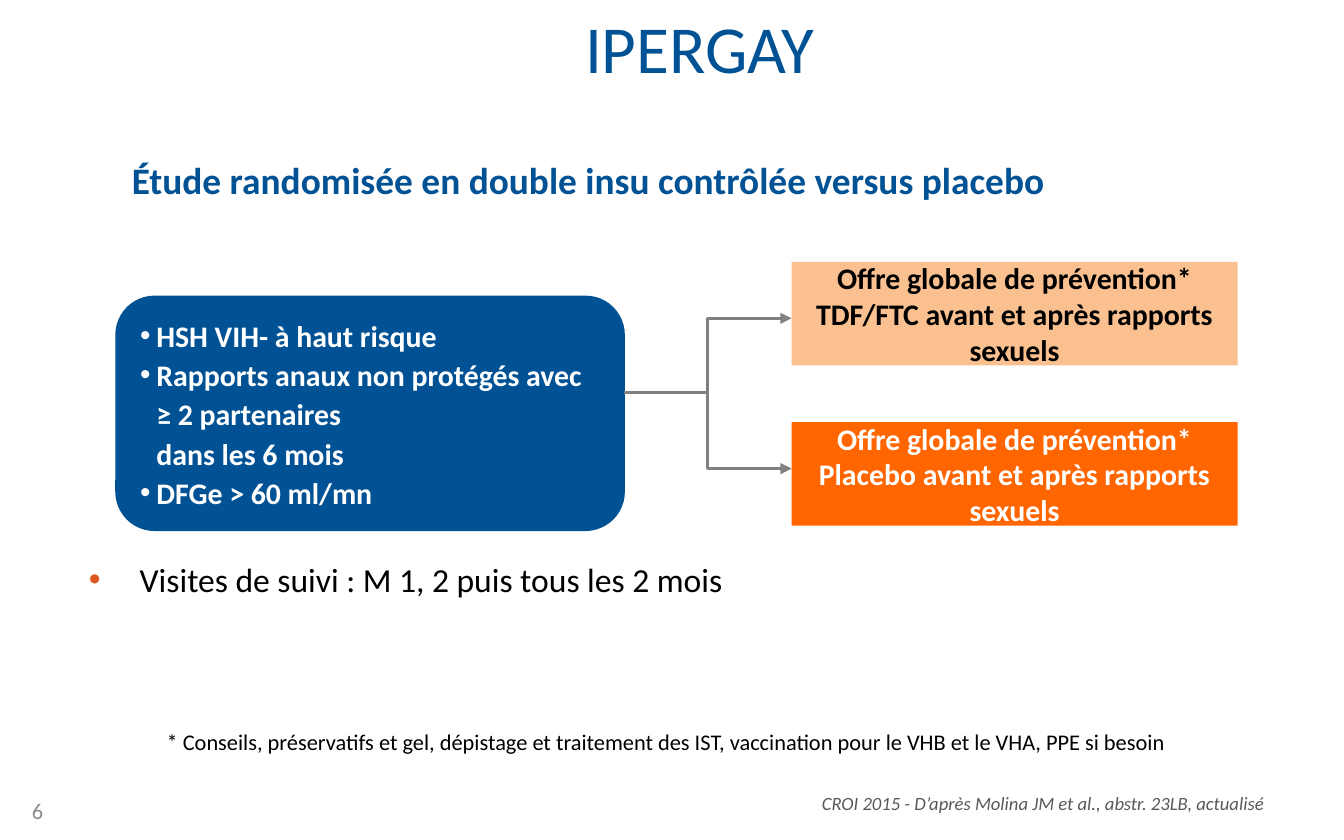
from lxml import etree
from pptx import Presentation
from pptx.dml.color import RGBColor
from pptx.enum.shapes import MSO_CONNECTOR, MSO_SHAPE
from pptx.enum.text import MSO_ANCHOR, MSO_AUTO_SIZE, PP_ALIGN
from pptx.oxml.ns import qn
from pptx.util import Cm, Pt

ELBOW = MSO_CONNECTOR.ELBOW
RECTANGLE, ROUNDED = MSO_SHAPE.RECTANGLE, MSO_SHAPE.ROUNDED_RECTANGLE
TOP, MIDDLE = MSO_ANCHOR.TOP, MSO_ANCHOR.MIDDLE
LEFT, CENTER, RIGHT = PP_ALIGN.LEFT, PP_ALIGN.CENTER, PP_ALIGN.RIGHT
NO_FIT = MSO_AUTO_SIZE.NONE

FONT = "Calibri"
COLORS = {
    "blue": "005294",
    "orange": "FF6600",
    "peach": "FAC090",
    "bullet": "DC5A20",
    "line": "808080",
    "source": "595959",
    "number": "8C8C8C",
    "black": "000000",
    "white": "FFFFFF",
}


def color(name):
    return RGBColor.from_string(COLORS[name])


def set_bullet(para, indent, bullet_color=None):
    """Give the paragraph a round bullet with a hanging indent, or none at all."""
    props = para._p.get_or_add_pPr()
    props.set("marL", str(Cm(indent)))
    props.set("indent", str(-Cm(indent)))
    if not indent:
        etree.SubElement(props, qn("a:buNone"))
        return
    if bullet_color:
        fill = etree.SubElement(props, qn("a:buClr"))
        etree.SubElement(fill, qn("a:srgbClr"), val=COLORS[bullet_color])
    etree.SubElement(props, qn("a:buFont"), typeface="Arial")
    etree.SubElement(props, qn("a:buChar"), char="•")


def write_text(box, *texts, size, ink="black", bold=False, italic=False, align=LEFT,
               anchor=TOP, wrap=True, margin=None, line=None, before=0, after=0,
               indent=None, bullet_color=None):
    """Write one paragraph per text; a newline is a break within a paragraph."""
    frame = box.text_frame
    frame.word_wrap, frame.auto_size, frame.vertical_anchor = wrap, NO_FIT, anchor
    if margin is not None:
        frame.margin_left = frame.margin_right = Cm(margin)
        frame.margin_top = frame.margin_bottom = Cm(margin)
    for number, text in enumerate(texts):
        para = frame.add_paragraph() if number else frame.paragraphs[0]
        para.text = text
        para.alignment = align
        para.space_before, para.space_after = Pt(before), Pt(after)
        if line:
            para.line_spacing = line
        if indent is not None:
            set_bullet(para, indent, bullet_color)
        for span in para.runs:
            span.font.name, span.font.size = FONT, Pt(size)
            span.font.bold, span.font.italic = bold, italic
            span.font.color.rgb = color(ink)
        for line_break in para._p.findall(qn("a:br")):
            etree.SubElement(line_break, qn("a:rPr"), sz=str(size * 100))


def place(box, left, top, width, height):
    box.left, box.top, box.width, box.height = map(Cm, (left, top, width, height))
    return box


def add_text(page, left, top, width, height, text, **style):
    box = page.shapes.add_textbox(*map(Cm, (left, top, width, height)))
    write_text(box, text, **style)


def add_box(page, kind, left, top, width, height, fill, *texts, **style):
    box = page.shapes.add_shape(kind, *map(Cm, (left, top, width, height)))
    box.shadow.inherit = False
    box.fill.solid()
    box.fill.fore_color.rgb = color(fill)
    box.line.fill.background()
    write_text(box, *texts, size=16, bold=True, **style)


def add_arrow(page, start, end):
    arrow = page.shapes.add_connector(ELBOW, *map(Cm, start + end))
    arrow.line.color.rgb = color("line")
    arrow.line.width = Pt(1.5)
    etree.SubElement(arrow.line._get_or_add_ln(), qn("a:tailEnd"), type="triangle")
    etree.SubElement(arrow._element.spPr, qn("a:effectLst"))


def main():
    deck = Presentation()
    deck.slide_width, deck.slide_height = Cm(25.4), Cm(15.88)
    page = deck.slides.add_slide(deck.slide_layouts[3])
    title, subtitle, follow_up = page.placeholders

    # Title, subtitle and follow-up visits
    write_text(place(title, 2.95, 0.56, 20.55, 1.4), "IPERGAY", size=36, ink="blue",
               align=CENTER, anchor=MIDDLE, margin=0, line=Pt(22))
    write_text(place(subtitle, 2.49, 2.97, 21.18, 1.47),
               "Étude randomisée en double insu contrôlée versus placebo",
               size=20, ink="blue", bold=True, margin=0, before=4, indent=0)
    write_text(place(follow_up, 1.68, 10.57, 21.18, 2.59),
               "Visites de suivi : M 1, 2 puis tous les 2 mois",
               size=18, margin=0, before=4, indent=0.96, bullet_color="bullet")

    # Inclusion criteria
    add_box(page, ROUNDED, 2.18, 5.59, 9.63, 4.45, "blue",
            "HSH VIH- à haut risque",
            "Rapports anaux non protégés avec ≥ 2 partenaires\ndans les 6 mois",
            "DFGe > 60 ml/mn",
            ink="white", line=1.1, indent=0.31)

    # Two study arms, each reached by an arrow
    arms = [
        (4.95, 6.02, "peach", "black",
         "Offre globale de prévention*\nTDF/FTC avant et après rapports sexuels"),
        (7.98, 8.86, "orange", "white",
         "Offre globale de prévention* Placebo avant et après rapports sexuels"),
    ]
    for top, arrow_end, fill, ink, text in arms:
        add_arrow(page, (11.79, 7.42), (14.96, arrow_end))
        add_box(page, RECTANGLE, 14.96, top, 8.43, 1.96, fill, text, ink=ink,
                align=CENTER, anchor=MIDDLE, before=6, after=4)

    # Footnote, source and page number
    add_text(page, 2.9, 13.64, 19.71, 0.76,
             "* Conseils, préservatifs et gel, dépistage et traitement des IST, "
             "vaccination pour le VHB et le VHA, PPE si besoin", size=12, wrap=False)
    add_text(page, 7.7, 14.81, 16.43, 0.74,
             "CROI 2015 - D’après Molina JM et al., abstr. 23LB, actualisé",
             size=10, ink="source", italic=True, align=RIGHT, anchor=MIDDLE)
    add_text(page, 0, 14.88, 1.07, 0.89, "6", size=12, ink="number",
             align=RIGHT, anchor=MIDDLE)

    deck.save("out.pptx")


if __name__ == "__main__":
    main()
